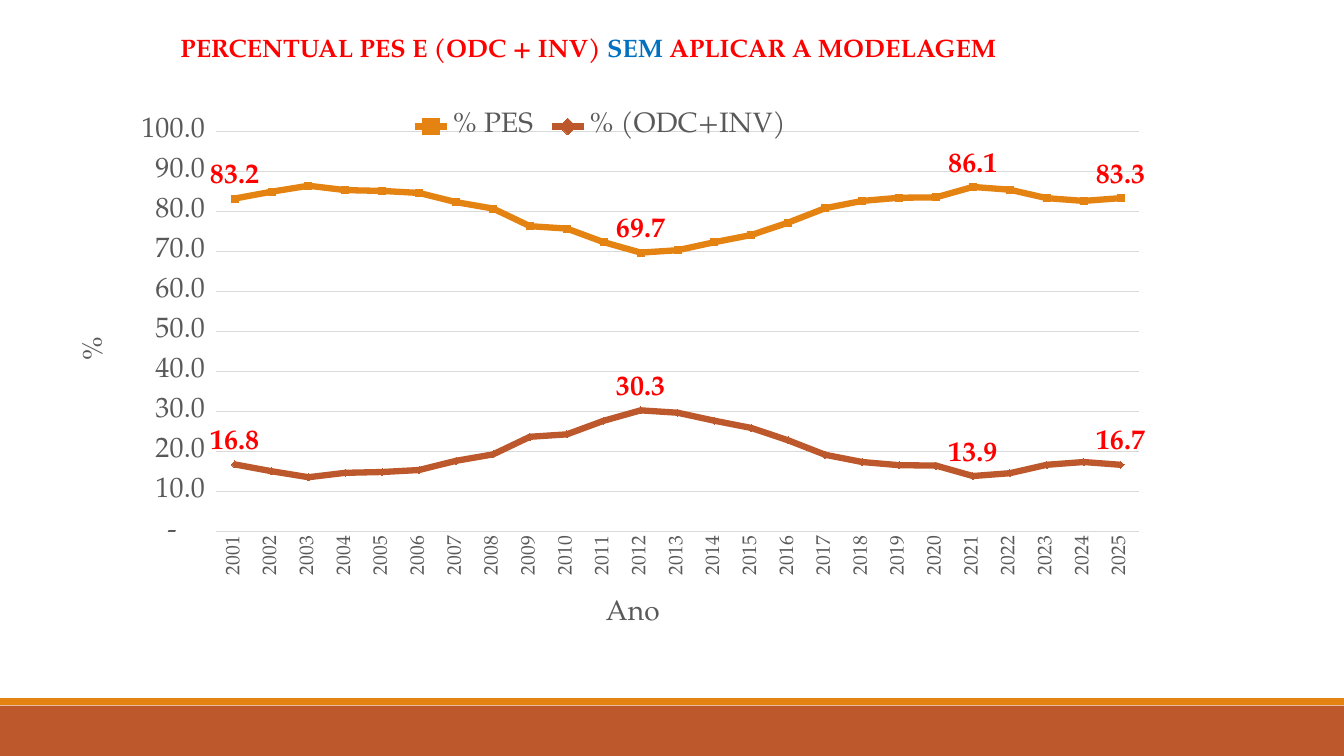
from lxml import etree
from pptx import Presentation
from pptx.chart.data import CategoryChartData
from pptx.dml.color import RGBColor
from pptx.enum.chart import XL_CHART_TYPE as ChartType
from pptx.enum.chart import XL_LABEL_POSITION as LabelPosition
from pptx.enum.chart import XL_LEGEND_POSITION as LegendPosition
from pptx.enum.chart import XL_TICK_MARK as TickMark
from pptx.enum.shapes import MSO_SHAPE as ShapeType
from pptx.enum.text import MSO_ANCHOR as Anchor
from pptx.enum.text import PP_ALIGN as Align
from pptx.oxml.ns import qn
from pptx.util import Pt

FONT = "TeX Gyre Pagella"
ORANGE, RUST, RED, BLUE = "E48312", "BD582C", "FF0000", "0070C0"
GRAY, GRID = "595959", "D9D9D9"

YEARS = [str(year) for year in range(2001, 2026)]
PES = [83.2, 84.9, 86.4, 85.3, 85.1, 84.6, 82.3, 80.7, 76.3, 75.7, 72.3, 69.7, 70.3,
       72.3, 74.1, 77.2, 80.8, 82.6, 83.4, 83.5, 86.1, 85.4, 83.3, 82.6, 83.3]
SERIES = {
    "% PES": (PES, ORANGE),
    "% (ODC+INV)": ([round(100 - value, 1) for value in PES], RUST),
}
LABELLED_YEARS = ["2001", "2012", "2021", "2025"]
VALUE_FORMAT = r'_-* #,##0.0_-;\-* #,##0.0_-;_-* "-"??_-;_-@_-'


def color(hex_text):
    return RGBColor.from_string(hex_text)


def style_font(font, size, hex_text, bold=False):
    font.name = FONT
    font.size = Pt(size)
    font.bold = bold
    font.color.rgb = color(hex_text)


def style_line(line, hex_text, width):
    line.color.rgb = color(hex_text)
    line.width = Pt(width)


def add_band(slide, top, height, fill):
    band = slide.shapes.add_shape(ShapeType.RECTANGLE, 0, Pt(top), Pt(960), Pt(height))
    band.shadow.inherit = False
    band.fill.solid()
    band.fill.fore_color.rgb = color(fill)
    band.line.fill.background()


def add_title(slide, runs):
    title = slide.shapes.title
    title.left, title.top, title.width, title.height = Pt(121.7), Pt(19.4), Pt(597.6), Pt(51)
    frame = title.text_frame
    frame.word_wrap = False
    frame.vertical_anchor = Anchor.TOP
    paragraph = frame.paragraphs[0]
    paragraph.alignment = Align.LEFT
    for text, hex_text in runs:
        run = paragraph.add_run()
        run.text = text
        style_font(run.font, 18, hex_text, bold=True)


def set_layout(parent, index, **values):
    """Place a chart part by fractions of the chart area."""
    for old in parent.findall(qn("c:layout")):
        parent.remove(old)
    layout = etree.Element(qn("c:layout"))
    manual = etree.SubElement(layout, qn("c:manualLayout"))
    for name, value in values.items():
        etree.SubElement(manual, qn(f"c:{name}")).set("val", str(value))
    parent.insert(index, layout)


def style_axis(axis, title, size, x, y):
    axis.major_tick_mark = axis.minor_tick_mark = TickMark.NONE
    style_font(axis.tick_labels.font, size, GRAY)
    frame = axis.axis_title.text_frame
    frame.text = title
    style_font(frame.paragraphs[0].font, 20, GRAY)
    set_layout(axis.axis_title._element, 1, xMode="edge", yMode="edge", x=x, y=y)


def style_series(series, hex_text):
    series.smooth = False
    style_line(series.format.line, hex_text, 4.5)
    series.marker.style = None
    series.data_labels.show_value = False
    for year in LABELLED_YEARS:
        label = series.points[YEARS.index(year)].data_label
        style_font(label.font, 20, RED, bold=True)
        label.position = LabelPosition.ABOVE


def add_percent_chart(slide):
    data = CategoryChartData(number_format="0.0")
    data.categories = YEARS
    for name, (values, _) in SERIES.items():
        data.add_series(name, values)
    chart = slide.shapes.add_chart(
        ChartType.LINE, Pt(36.7), Pt(70.6), Pt(784.8), Pt(386.6), data).chart
    chart.has_title = False
    style_font(chart.font, 20, "000000")
    chart.plots[0].vary_by_categories = False
    for series in chart.plots[0].series:
        style_series(series, SERIES[series.name][1])

    # Legend
    chart.has_legend = True
    chart.legend.position = LegendPosition.TOP
    chart.legend.include_in_layout = False
    style_font(chart.legend.font, 20, GRAY)

    # Axes
    years, percent = chart.category_axis, chart.value_axis
    style_axis(years, "Ano", 14, 0.5, 0.91)
    style_line(years.format.line, GRID, 0.75)
    years._element.find(qn("c:txPr")).find(qn("a:bodyPr")).set("rot", "-5400000")
    style_axis(percent, "%", 20, 0.02, 0.43)
    percent.format.line.fill.background()
    percent.minimum_scale, percent.maximum_scale, percent.major_unit = 0, 100, 10
    percent.has_major_gridlines = True
    style_line(percent.major_gridlines.format.line, GRID, 0.75)
    percent.tick_labels.number_format = VALUE_FORMAT
    percent.tick_labels.number_format_is_linked = False

    # Plot area
    plot_area = chart._chartSpace.chart.plotArea
    set_layout(plot_area, 0, layoutTarget="inner", xMode="edge", yMode="edge",
               x=0.15, y=0.06, w=0.84, h=0.74)


def main():
    presentation = Presentation()
    presentation.slide_width, presentation.slide_height = Pt(960), Pt(540)
    slide = presentation.slides.add_slide(presentation.slide_layouts[5])
    add_band(slide, 504, 36, RUST)
    add_band(slide, 498.7, 5, ORANGE)
    add_percent_chart(slide)
    add_title(slide, [("PERCENTUAL PES E (ODC + INV) ", RED), ("SEM ", BLUE),
                      ("APLICAR A MODELAGEM", RED)])
    presentation.save("out.pptx")


if __name__ == "__main__":
    main()
